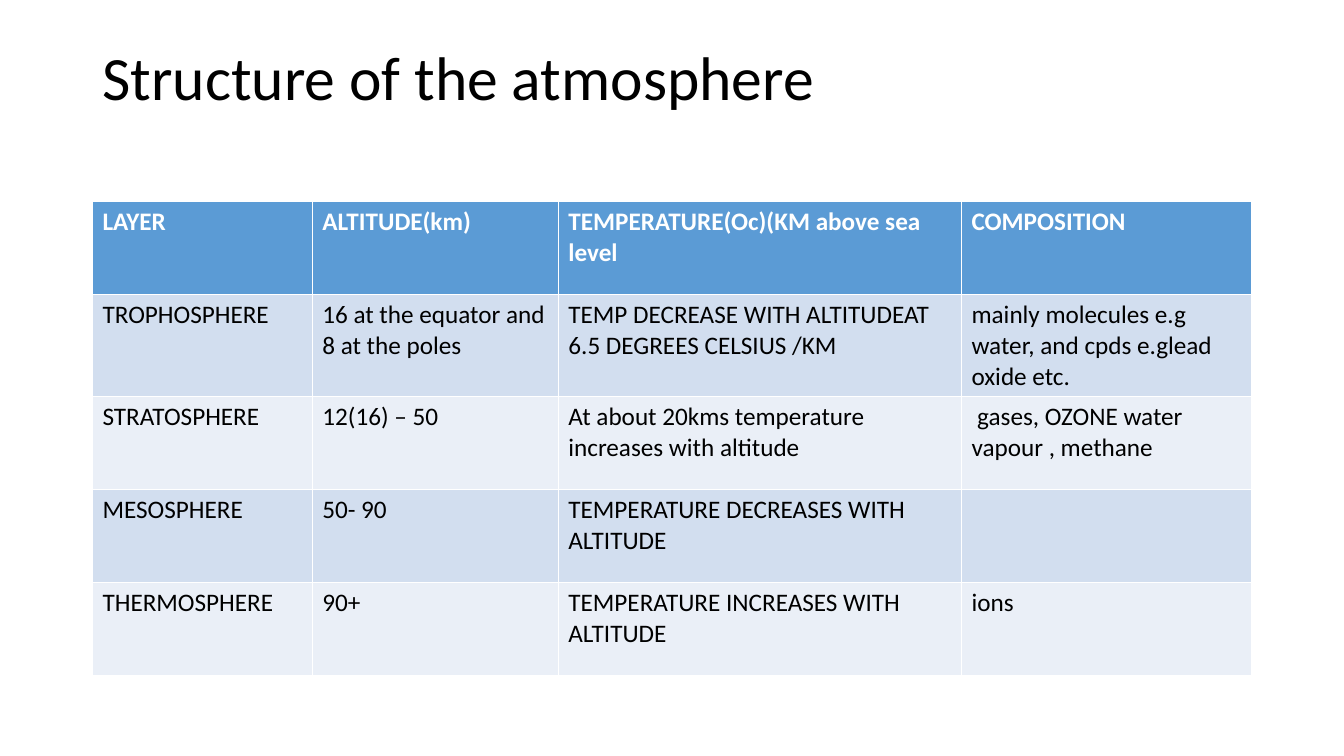
"""Build a slide with a table of the layers of the atmosphere."""
from pptx import Presentation
from pptx.dml.color import RGBColor
from pptx.enum.text import MSO_ANCHOR, PP_ALIGN
from pptx.util import Cm, Pt

COLORS = {
    "header": "5B9BD5",
    "odd": "D2DEEF",
    "even": "EAEFF7",
    "white": "FFFFFF",
    "black": "000000",
}
HEADER_FONT = {"name": "Calibri", "size": Pt(18), "bold": True}
BODY_FONT = {"name": "Calibri", "size": Pt(18), "bold": False}
TITLE_FONT = {"name": "Calibri", "size": Pt(44), "bold": False}
TITLE_BOX = {"left": Cm(2.33), "top": Cm(1.02), "width": Cm(29.21), "height": Cm(2)}
TITLE_FRAME = {"vertical_anchor": MSO_ANCHOR.MIDDLE, "word_wrap": True}
TITLE_PARAGRAPH = {"alignment": PP_ALIGN.LEFT, "line_spacing": 0.9}

COLUMN_WIDTHS = [5.54, 6.2, 10.16, 7.31]
ROW_HEIGHT = 2.34
LAYERS = [
    ["LAYER", "ALTITUDE(km)", "TEMPERATURE(Oc)(KM above sea level", "COMPOSITION"],
    ["TROPHOSPHERE", "16 at the equator and 8 at the poles",
     "TEMP DECREASE WITH ALTITUDEAT 6.5 DEGREES CELSIUS /KM",
     "mainly molecules e.g water, and cpds e.glead oxide etc."],
    ["STRATOSPHERE", "12(16) – 50",
     "At about 20kms temperature increases with altitude",
     " gases, OZONE water vapour , methane"],
    ["MESOSPHERE", "50- 90", "TEMPERATURE DECREASES WITH ALTITUDE", ""],
    ["THERMOSPHERE", "90+", "TEMPERATURE INCREASES WITH ALTITUDE", "ions"],
]


def apply_format(target, values):
    for attribute, value in values.items():
        setattr(target, attribute, value)


def format_font(font, values, color):
    apply_format(font, values)
    font.color.rgb = RGBColor.from_string(COLORS[color])


presentation = Presentation()
presentation.slide_width = Cm(33.87)
presentation.slide_height = Cm(19.05)
slide = presentation.slides.add_slide(presentation.slide_layouts[5])

title = slide.shapes.title
apply_format(title, TITLE_BOX)
title.text_frame.text = "Structure of the atmosphere"
apply_format(title.text_frame, TITLE_FRAME)
heading = title.text_frame.paragraphs[0]
apply_format(heading, TITLE_PARAGRAPH)
format_font(heading.runs[0].font, TITLE_FONT, "black")

atmosphere = slide.shapes.add_table(
    len(LAYERS), len(COLUMN_WIDTHS), Cm(2.33), Cm(5.08),
    Cm(sum(COLUMN_WIDTHS)), Cm(ROW_HEIGHT * len(LAYERS))).table
for column, width in zip(atmosphere.columns, COLUMN_WIDTHS):
    column.width = Cm(width)

for row_index, layer in enumerate(LAYERS):
    atmosphere.rows[row_index].height = Cm(ROW_HEIGHT)
    if row_index == 0:
        band, font_values, ink = "header", HEADER_FONT, "white"
    else:
        band, font_values, ink = "odd" if row_index % 2 else "even", BODY_FONT, "black"
    for column_index, entry in enumerate(layer):
        cell = atmosphere.cell(row_index, column_index)
        cell.text = entry
        cell.fill.solid()
        cell.fill.fore_color.rgb = RGBColor.from_string(COLORS[band])
        for run in cell.text_frame.paragraphs[0].runs:
            format_font(run.font, font_values, ink)

presentation.save("out.pptx")
